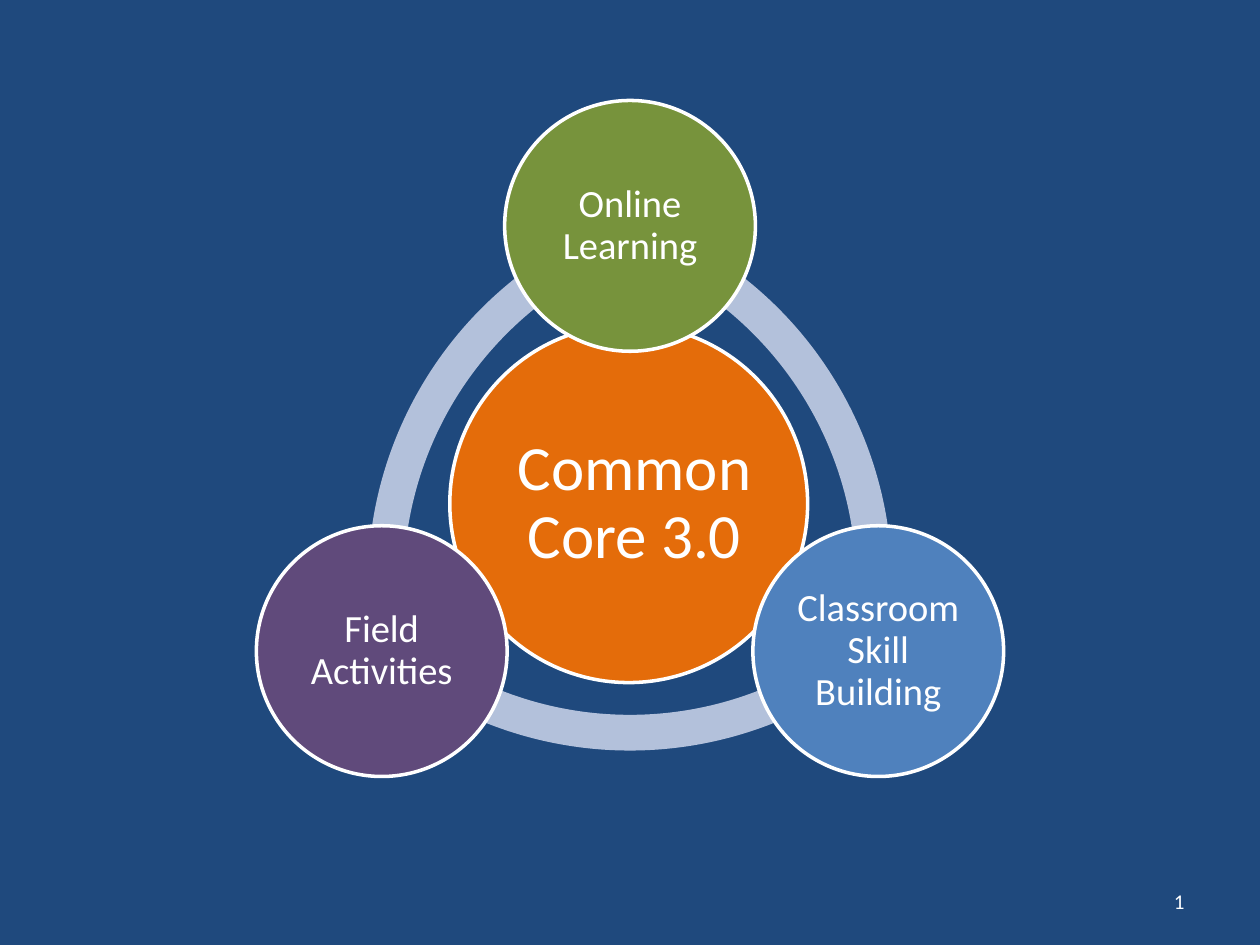
from math import cos, radians, sin

from pptx import Presentation
from pptx.dml.color import RGBColor
from pptx.enum.shapes import MSO_SHAPE
from pptx.enum.text import MSO_ANCHOR, PP_ALIGN
from pptx.util import Inches, Pt

ARC, CIRCLE = MSO_SHAPE.BLOCK_ARC, MSO_SHAPE.OVAL
MIDDLE = MSO_ANCHOR.MIDDLE
CENTER, RIGHT = PP_ALIGN.CENTER, PP_ALIGN.RIGHT
W, H = 10, 7.5
WHITE = "FFFFFF"
ANGLE_UNIT = 0.6  # 60000 steps per degree, adjustments count in 100000
HALF_SWEEP = 40.5
TOPICS = [
    ("Online Learning", "77933C", -90),
    ("Classroom Skill Building", "4F81BD", 30),
    ("Field Activities", "604A7B", 150),
]


def rgb(value):
    return RGBColor.from_string(value)


def write(sp, text, size=22, align=CENTER, insets=None, spacing=None):
    tf = sp.text_frame
    tf.word_wrap = True
    tf.vertical_anchor = MIDDLE
    if insets:
        tf.margin_left, tf.margin_top, tf.margin_right, tf.margin_bottom = map(Inches, insets)
    p = tf.paragraphs[0]
    p.alignment = align
    if spacing:
        p.line_spacing = spacing
    r = p.add_run()
    r.text = text
    r.font.size = Pt(size)
    r.font.name = "Calibri"
    r.font.color.rgb = rgb(WHITE)


def add_round(s, kind, center, diameter, fill, line=None):
    """Place a round shape by its centre."""
    x, y = (c - diameter / 2 for c in center)
    sp = s.shapes.add_shape(kind, *map(Inches, (x, y, diameter, diameter)))
    sp.shadow.inherit = False
    sp.fill.solid()
    sp.fill.fore_color.rgb = rgb(fill)
    if line:
        sp.line.color.rgb = rgb(line)
        sp.line.width = Pt(2)
    else:
        sp.line.fill.background()
    return sp


def orbit(center, rx, ry, angle):
    a = radians(angle)
    return center[0] + rx * cos(a), center[1] + ry * sin(a)


def radial_diagram(s, x, y, w, h):
    """Draw a hub, three topics around it and the arcs that join them."""
    center = x + w * 0.5, y + h * 0.539
    for angle in (30, -90, 150):
        arc = add_round(s, ARC, orbit(center, w * 0.116, w * 0.117, angle), w * 0.617, "B3C1DB")
        middle = angle + 180
        arc.adjustments[0] = (middle - HALF_SWEEP) % 360 * ANGLE_UNIT
        arc.adjustments[1] = (middle + HALF_SWEEP) % 360 * ANGLE_UNIT
        arc.adjustments[2] = 0.046

    hub = add_round(s, CIRCLE, (x + w * 0.499, y + h * 0.533), w * 0.284, "E46C0A", WHITE)
    write(hub, "Common Core 3.0", size=36, insets=(0.09, 0.05, 0, 0.05), spacing=0.9)

    for text, fill, angle in TOPICS:
        topic = add_round(s, CIRCLE, orbit(center, w * 0.2275, w * 0.225, angle),
                          w * 0.199, fill, WHITE)
        write(topic, text, insets=(0.03,) * 4, spacing=0.9)


def page_number(s, x, y, w, h):
    write(s.shapes.add_textbox(*map(Inches, (x, y, w, h))), "1", size=12, align=RIGHT)


def main():
    prs = Presentation()
    prs.slide_width, prs.slide_height = Inches(W), Inches(H)
    s = prs.slides.add_slide(prs.slide_layouts[6])
    s.background.fill.solid()
    s.background.fill.fore_color.rgb = rgb("1F497D")
    radial_diagram(s, 0, 0, W, H)
    page_number(s, W * 0.717, H * 0.927, W * 0.233, H * 0.053)
    prs.save("out.pptx")


if __name__ == "__main__":
    main()
